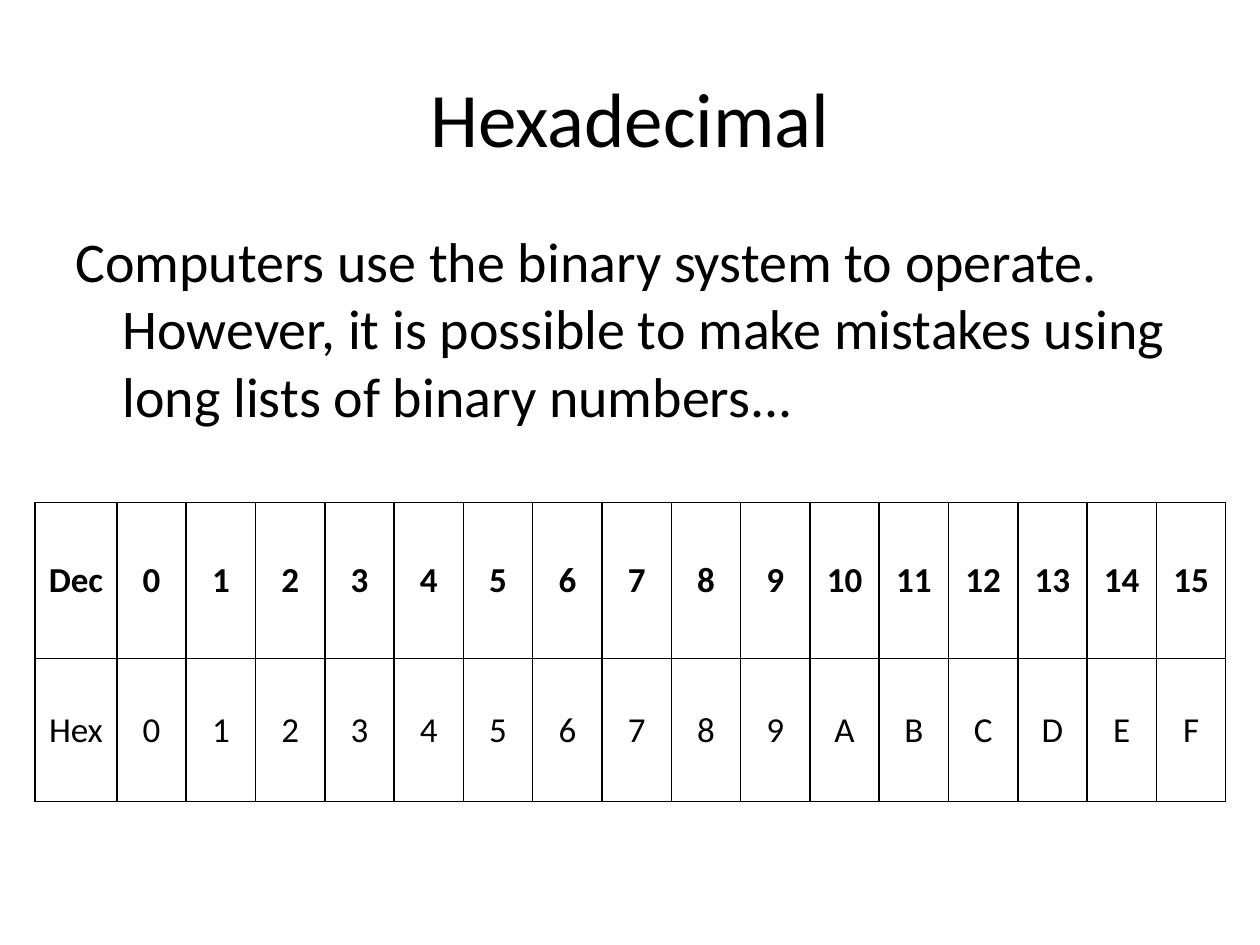
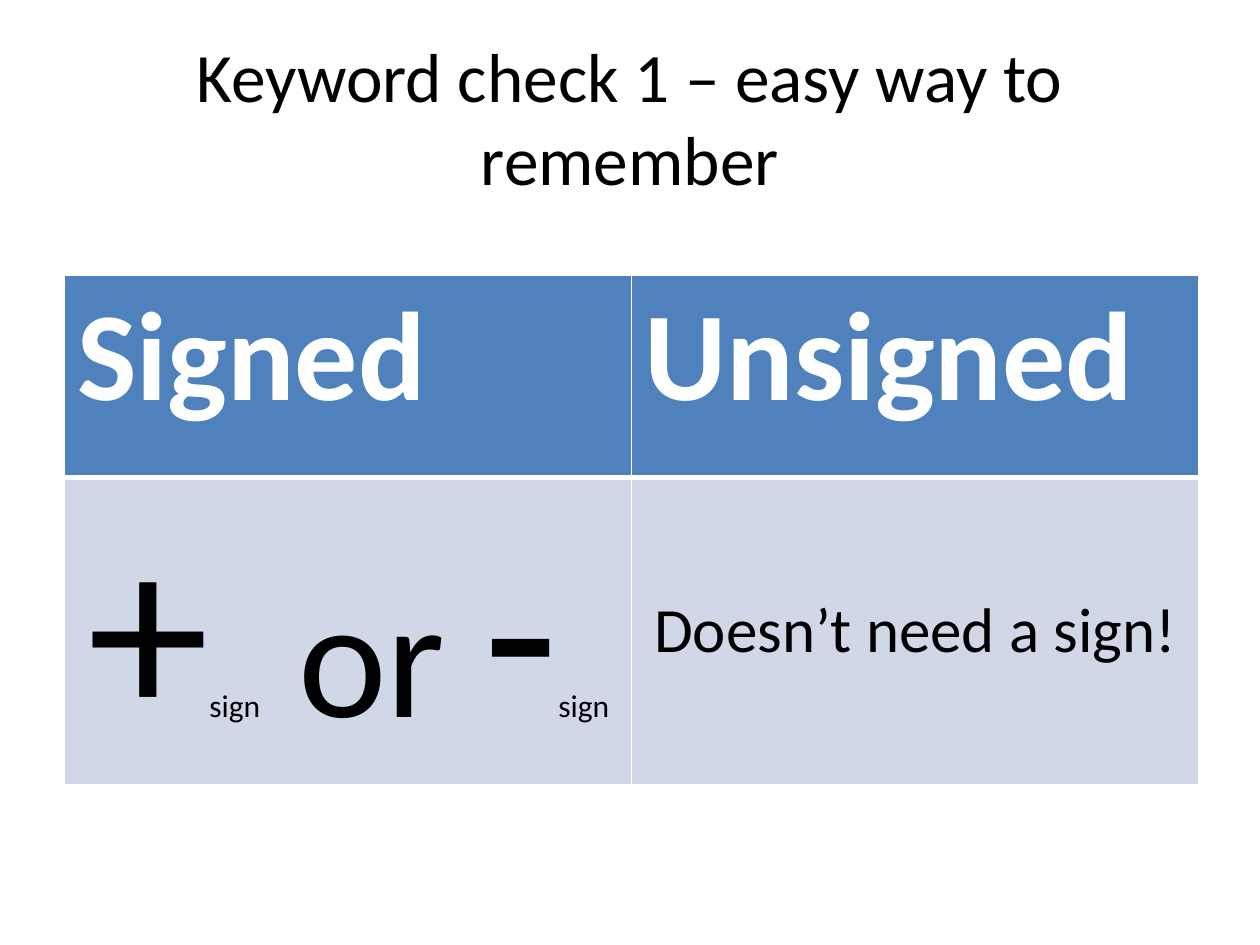
import pptx
import pptx.dml.color
import pptx.enum.text
import pptx.oxml.ns
import pptx.util
import lxml.etree

Pt = pptx.util.Pt
RGB = pptx.dml.color.RGBColor
ALIGN = pptx.enum.text.PP_ALIGN
ANCHOR = pptx.enum.text.MSO_ANCHOR

BLACK = RGB(0x00, 0x00, 0x00)
WHITE = RGB(0xFF, 0xFF, 0xFF)
BLUE = RGB(0x4F, 0x81, 0xBD)
PALE = RGB(0xD0, 0xD8, 0xE8)
FONT = "Calibri"


class Deck:
    def __init__(self):
        self.show = pptx.Presentation()
        self.show.slide_width, self.show.slide_height = Pt(720), Pt(540)
        self.slide = None

    def page(self, title, size):
        self.slide = self.show.slides.add_slide(self.show.slide_layouts[6])
        self.text(title, (36, 21.6, 648, 90), size, ALIGN.CENTER, ANCHOR.MIDDLE)

    def run(self, para, text, size, color=BLACK, bold=False):
        run = para.add_run()
        run.text = text
        font = run.font
        font.name, font.size, font.bold = FONT, Pt(size), bold
        font.color.rgb = color

    def text(self, text, place, size, align=ALIGN.LEFT, anchor=ANCHOR.TOP):
        box = self.slide.shapes.add_textbox(*map(Pt, place))
        frame = box.text_frame
        frame.word_wrap = True
        frame.vertical_anchor = anchor
        para = frame.paragraphs[0]
        para.alignment = align
        self.run(para, text, size)
        return para

    def table(self, left, top, cols, rows):
        """Add a plain table from its column widths and row heights."""
        frame = self.slide.shapes.add_table(
            len(rows), len(cols), Pt(left), Pt(top), Pt(sum(cols)), Pt(sum(rows)))
        table = frame.table
        table.first_row = table.horz_banding = False
        for col, width in zip(table.columns, cols):
            col.width = Pt(width)
        for row, height in zip(table.rows, rows):
            row.height = Pt(height)
        return table

    def cell(self, cell, runs, fill, edge, align=ALIGN.CENTER,
             anchor=ANCHOR.MIDDLE, top=1, bottom=1):
        """Fill a cell; each run is (text, size, color, bold)."""
        for side, width in zip("LRTB", (1, 1, top, bottom)):
            self.border(cell, side, edge, width)
        cell.fill.solid()
        cell.fill.fore_color.rgb = fill
        cell.vertical_anchor = anchor
        para = cell.text_frame.paragraphs[0]
        para.alignment = align
        for run in runs:
            self.run(para, *run)

    def border(self, cell, side, color, width):
        qn = pptx.oxml.ns.qn
        props = cell._tc.get_or_add_tcPr()
        line = lxml.etree.SubElement(props, qn("a:ln" + side), w=str(Pt(width)))
        fill = lxml.etree.SubElement(line, qn("a:solidFill"))
        lxml.etree.SubElement(fill, qn("a:srgbClr"), val=str(color))


def hex_page(deck):
    deck.page("Hexadecimal", 44)
    para = deck.text(
        "Computers use the binary system to operate. However, it is possible "
        "to make mistakes using long lists of binary numbers...",
        (36, 126, 648, 356.4), 32)
    para.space_before = Pt(6.4)
    props = para._p.get_or_add_pPr()
    props.set("marL", str(Pt(27)))
    props.set("indent", str(Pt(-27)))

    rows = (["Dec"] + [str(num) for num in range(16)],
            ["Hex"] + [f"{num:X}" for num in range(16)])
    table = deck.table(20, 287.2, [46.8] + [39.6] * 16, [89.2, 81.6])
    for r, row in enumerate(rows):
        for c, text in enumerate(row):
            deck.cell(table.cell(r, c), [(text, 20, BLACK, r == 0)], WHITE, BLACK)


def sign_page(deck):
    deck.page("Keyword check 1 – easy way to remember", 39.6)
    table = deck.table(37, 157, [324, 324], [116, 174.4])
    for c, text in enumerate(("Signed", "Unsigned")):
        deck.cell(table.cell(0, c), [(text, 72, WHITE, True)], BLUE, WHITE,
                  ALIGN.LEFT, ANCHOR.TOP, bottom=3)
    signs = [("+", 140), ("sign", 18), (" or ", 96), ("-", 140), ("sign", 18)]
    deck.cell(table.cell(1, 0), signs, PALE, WHITE, anchor=ANCHOR.TOP, top=3)
    deck.cell(table.cell(1, 1), [("Doesn’t need a sign!", 36)], PALE, WHITE, top=3)


def main():
    deck = Deck()
    hex_page(deck)
    sign_page(deck)
    deck.show.save("out.pptx")


if __name__ == "__main__":
    main()
